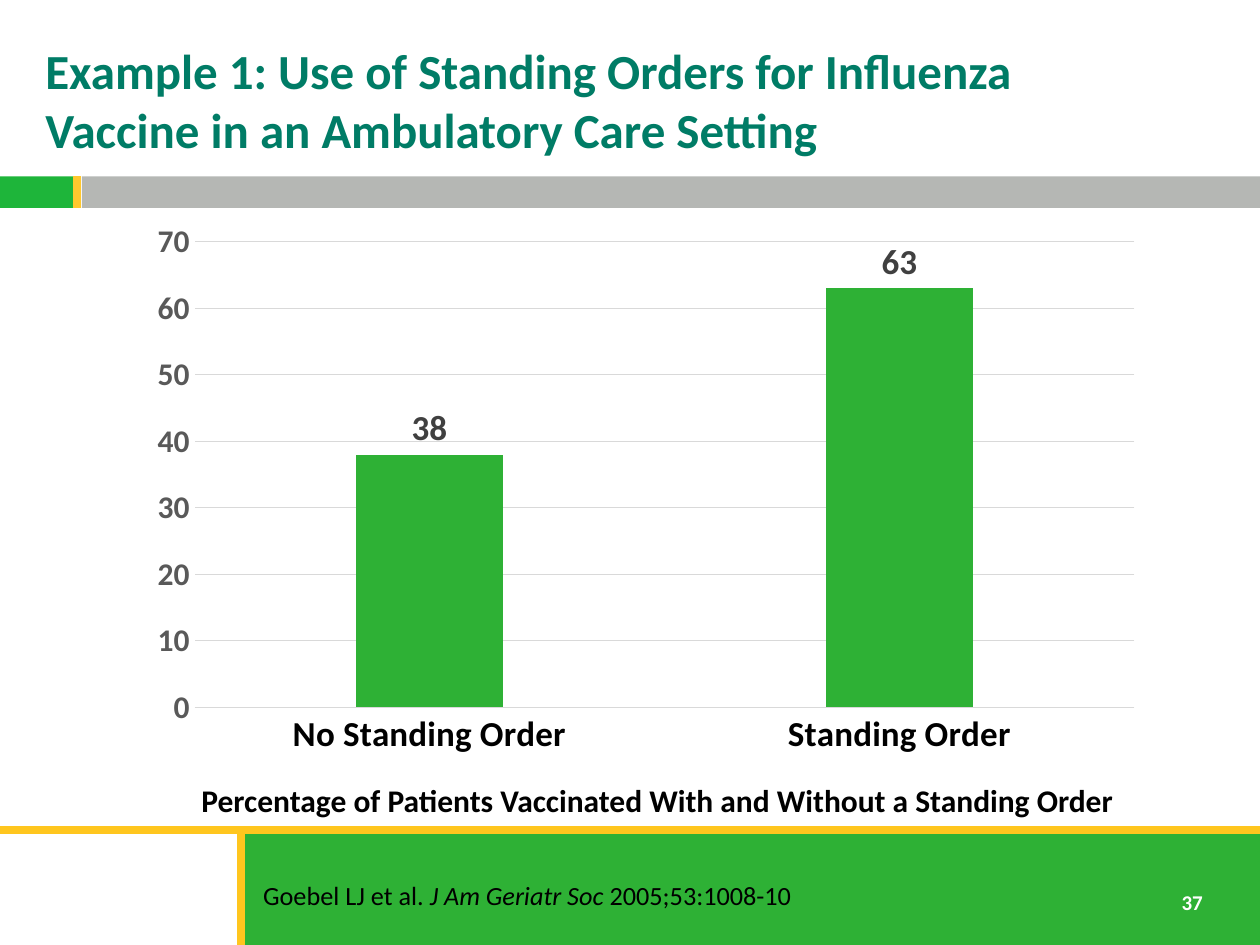
from lxml.etree import SubElement
from pptx import Presentation
from pptx.chart.data import CategoryChartData
from pptx.dml.color import RGBColor
from pptx.enum.chart import XL_CHART_TYPE as ChartType, XL_LABEL_POSITION as LabelPos
from pptx.enum.chart import XL_TICK_MARK as Tick
from pptx.enum.shapes import MSO_CONNECTOR as Conn, MSO_SHAPE as Shape
from pptx.enum.text import MSO_ANCHOR as Anchor, MSO_AUTO_SIZE as AutoSize, PP_ALIGN as Align
from pptx.oxml.ns import qn
from pptx.util import Inches, Pt

FONT = "Calibri"
WHITE = RGBColor(0xFF, 0xFF, 0xFF)
BLACK = RGBColor(0, 0, 0)
TEAL = RGBColor(0x00, 0x7C, 0x66)
BRIGHT_GREEN = RGBColor(0x1E, 0xB5, 0x3A)
GREEN = RGBColor(0x2E, 0xB1, 0x35)
GRAY = RGBColor(0xB5, 0xB7, 0xB4)
GOLD = RGBColor(0xFF, 0xC6, 0x1E)
LIGHT_GOLD = RGBColor(0xFF, 0xC8, 0x2E)
GRID = RGBColor(0xD9, 0xD9, 0xD9)
AXIS_TEXT = RGBColor(0x59, 0x59, 0x59)
LABEL_TEXT = RGBColor(0x40, 0x40, 0x40)

# Content
TITLE = "Example 1: Use of Standing Orders for Influenza Vaccine in an Ambulatory Care Setting"
RATES = {"No Standing Order": 38, "Standing Order": 63}
CAPTION = "Percentage of Patients Vaccinated With and Without a Standing Order"
CITATION = [("Goebel LJ et al. ", False), ("J Am Geriatr Soc\u00a0", True),
            ("2005;53:1008-10", False)]
PAGE = "37"

# Decoration: left, top, width, height / x1, y1, x2, y2
BANDS = [
    (0, 1.35, 10, 0.35, WHITE),
    (0, 1.4, 0.58, 0.25, BRIGHT_GREEN),
    (0.65, 1.4, 9.35, 0.25, GRAY),
    (1.91, 6.59, 8.09, 0.91, GREEN),
]
RULES = [
    (0, 6.59, 10, 6.59, GOLD),
    (1.91, 6.59, 1.91, 7.5, GOLD),
    (0.61, 1.4, 0.61, 1.65, LIGHT_GOLD),
]
PLOT = {"x": 0.067, "y": 0.106, "w": 0.886, "h": 0.77}


def style(font, size, color, bold=True):
    font.name, font.size, font.bold = FONT, Pt(size), bold
    font.color.rgb = color


def add_text(s, box, runs, size, color, bold=True):
    tf = s.shapes.add_textbox(*map(Inches, box)).text_frame
    tf.word_wrap = True
    for text, italic in runs:
        r = tf.paragraphs[0].add_run()
        r.text = text
        style(r.font, size, color, bold)
        r.font.italic = italic


def add_decoration(s):
    for *box, color in BANDS:
        band = s.shapes.add_shape(Shape.RECTANGLE, *map(Inches, box))
        band.shadow.inherit = False
        band.fill.solid()
        band.fill.fore_color.rgb = color
        band.line.fill.background()
    for *ends, color in RULES:
        rule = s.shapes.add_connector(Conn.STRAIGHT, *map(Inches, ends))
        rule.line.color.rgb = color
        rule.line.width = Pt(4.5)
        SubElement(rule._element.spPr, qn("a:effectLst"))


def set_plot_area(chart):
    area = chart._chartSpace.find(".//" + qn("c:plotArea"))
    layout = area.find(qn("c:layout"))
    if layout is not None:
        area.remove(layout)
    layout = SubElement(area, qn("c:layout"))
    area.insert(0, layout)
    manual = SubElement(layout, qn("c:manualLayout"))
    settings = {"layoutTarget": "inner", "xMode": "edge", "yMode": "edge", **PLOT}
    for tag, value in settings.items():
        SubElement(manual, qn("c:" + tag)).set("val", str(value))


def add_rate_chart(s):
    data = CategoryChartData()
    data.categories = list(RATES)
    data.add_series("Series 1", list(RATES.values()))
    box = map(Inches, (0.98, 1.41, 8.42, 4.8))
    chart = s.shapes.add_chart(ChartType.COLUMN_CLUSTERED, *box, data).chart
    chart.has_legend = chart.has_title = False
    chart.font.name, chart.font.size = "Cabin", Pt(10)
    chart.font.color.rgb = BLACK

    plot = chart.plots[0]
    plot.gap_width, plot.overlap, plot.vary_by_categories = 219, -27, False
    series = plot.series[0]
    series.format.fill.solid()
    series.format.fill.fore_color.rgb = GREEN
    labels = series.data_labels
    labels.show_value = True
    labels.position = LabelPos.OUTSIDE_END
    style(labels.font, 20, LABEL_TEXT)

    cat, val = chart.category_axis, chart.value_axis
    for axis, size, color in ((cat, 20, BLACK), (val, 18, AXIS_TEXT)):
        axis.major_tick_mark = axis.minor_tick_mark = Tick.NONE
        style(axis.tick_labels.font, size, color)
    val.minimum_scale, val.maximum_scale, val.major_unit = 0, 70, 10
    val.format.line.fill.background()
    for line in (cat.format.line, val.major_gridlines.format.line):
        line.color.rgb = GRID
        line.width = Pt(0.75)
    set_plot_area(chart)


def add_title(s):
    title = s.shapes.title
    title.left, title.top, title.width, title.height = map(Inches, (0.26, 0.25, 8.74, 1.08))
    tf = title.text_frame
    tf.text = TITLE
    tf.word_wrap, tf.auto_size = True, AutoSize.NONE
    tf.vertical_anchor = Anchor.MIDDLE
    p = tf.paragraphs[0]
    p.alignment = Align.LEFT
    style(p.runs[0].font, 28, TEAL)


def main():
    prs = Presentation()
    prs.slide_width, prs.slide_height = Inches(10), Inches(7.5)
    s = prs.slides.add_slide(prs.slide_layouts[5])
    add_decoration(s)
    add_text(s, (9.28, 7.01, 0.4, 0.3), [(PAGE, False)], 12, WHITE)
    add_title(s)
    add_rate_chart(s)
    add_text(s, (1.99, 6.93, 6.39, 0.35), CITATION, 15, BLACK, bold=False)
    add_text(s, (1.5, 6.15, 7.5, 0.4), [(CAPTION, False)], 18, BLACK)
    prs.save("out.pptx")


if __name__ == "__main__":
    main()
